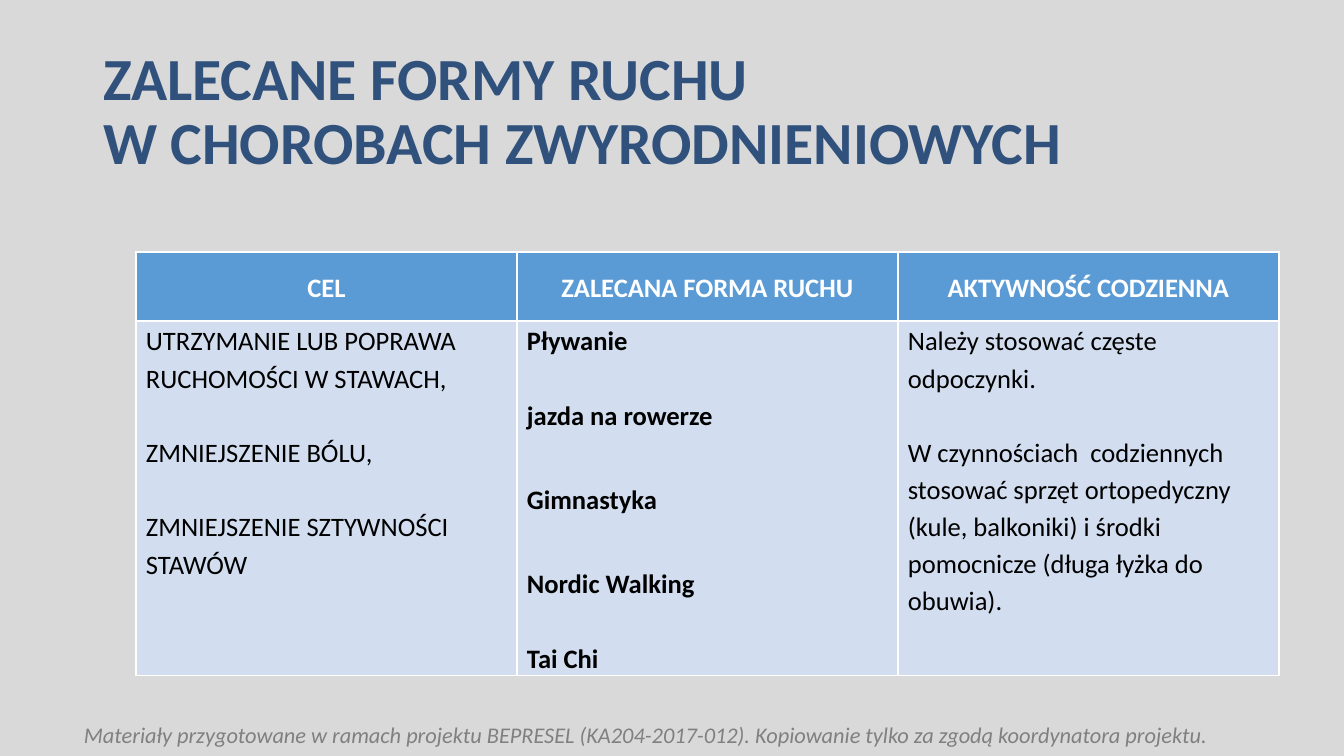
from dataclasses import dataclass

from lxml.etree import SubElement as Sub
from pptx import Presentation
from pptx.dml.color import RGBColor as Rgb
from pptx.enum.text import MSO_ANCHOR as Anchor, MSO_AUTO_SIZE as Fit, PP_ALIGN as Align
from pptx.oxml.ns import qn
from pptx.util import Pt

EMU = 914400 / 100.8


@dataclass(frozen=True)
class Theme:
    """Colours, font and type sizes of the slide."""
    font: str = "Calibri"
    back: str = "D9D9D9"
    title: str = "31517D"
    head: str = "5B9BD5"
    body: str = "D2DEEF"
    white: str = "FFFFFF"
    black: str = "000000"
    grey: str = "808080"
    big: float = 42.7
    cell: float = 19
    note: float = 16
    rule: float = 1
    gap: float = 26.7
    wide: float = 33.7


T = Theme()

HEADS = ["CEL", "ZALECANA FORMA RUCHU", "AKTYWNOŚĆ CODZIENNA"]
GOALS = [
    ("UTRZYMANIE LUB POPRAWA RUCHOMOŚCI W STAWACH,", 0),
    ("ZMNIEJSZENIE BÓLU,", T.gap),
    ("ZMNIEJSZENIE SZTYWNOŚCI STAWÓW", T.gap),
]
FORMS = [
    ("Pływanie", 0),
    ("jazda na rowerze", T.gap),
    ("Gimnastyka", T.wide),
    ("Nordic Walking", T.wide),
    ("Tai Chi", T.gap),
]
DAILY = [
    ("Należy stosować częste odpoczynki.", 0),
    ("W czynnościach  codziennych stosować sprzęt ortopedyczny (kule, balkoniki) "
     "i środki pomocnicze (długa łyżka do obuwia).", T.gap),
]
NOTE = ("Materiały przygotowane w ramach projektu BEPRESEL (KA204-2017-012). "
        "Kopiowanie tylko za zgodą koordynatora projektu.")


def px(num):
    """Turn pixels into EMU."""
    return round(num * EMU)


def apply(item, **vals):
    """Set every given attribute on an item."""
    for name, val in vals.items():
        setattr(item, name, val)


def paint(fill, tint):
    """Fill with one solid colour."""
    fill.solid()
    fill.fore_color.rgb = Rgb.from_string(tint)


def write(para, text, size, tint, form=None, **font):
    """Put formatted text into a paragraph."""
    para.text = text
    apply(para, **(form or {}))
    for run in para.runs:
        apply(run.font, name=T.font, size=Pt(size), **font)
        run.font.color.rgb = Rgb.from_string(tint)


def frame(cell):
    """Draw white borders on the four sides of a cell."""
    props = cell._tc.get_or_add_tcPr()
    for side in "LRTB":
        line = Sub(props, qn(f"a:ln{side}"), w=str(Pt(T.rule)))
        Sub(Sub(line, qn("a:solidFill")), qn("a:srgbClr"), val=T.white)


def fill_cell(cell, lines, back, tint, bold, align, anchor):
    """Style a cell and write its paragraphs."""
    frame(cell)
    paint(cell.fill, back)
    apply(cell, margin_left=px(10), margin_right=px(10), margin_top=0,
          margin_bottom=0, vertical_anchor=anchor)
    text = cell.text_frame
    for i, (words, gap) in enumerate(lines):
        para = text.add_paragraph() if i else text.paragraphs[0]
        form = dict(alignment=align, line_spacing=1.15, space_before=Pt(gap))
        write(para, words, T.cell, tint, form, bold=bold)


def add_title(slide):
    """Place and write the title."""
    title = slide.shapes.title
    apply(title, left=px(93), top=px(40), width=px(1159), height=px(146))
    apply(title.text_frame, word_wrap=True, auto_size=Fit.NONE,
          vertical_anchor=Anchor.MIDDLE)
    write(title.text_frame.paragraphs[0],
          "ZALECANE FORMY RUCHU \vW CHOROBACH ZWYRODNIENIOWYCH", T.big, T.title,
          dict(alignment=Align.LEFT, line_spacing=0.9), bold=True)


def add_grid(slide):
    """Build the table of goals, forms and daily habits."""
    grid = slide.shapes.add_table(2, 3, px(136), px(252), px(1143), px(423)).table
    for row, high in zip(grid.rows, (69, 354)):
        row.height = px(high)
    for i, (head, lines) in enumerate(zip(HEADS, (GOALS, FORMS, DAILY))):
        grid.columns[i].width = px(381)
        fill_cell(grid.cell(0, i), [(head, 0)], T.head, T.white, True,
                  Align.CENTER, Anchor.MIDDLE)
        fill_cell(grid.cell(1, i), lines, T.body, T.black, lines is FORMS,
                  Align.LEFT, Anchor.TOP)


def add_note(slide):
    """Write the notice at the foot."""
    text = slide.shapes.add_textbox(px(74), px(716), px(1260), px(37)).text_frame
    apply(text, word_wrap=True, auto_size=Fit.SHAPE_TO_FIT_TEXT)
    write(text.paragraphs[0], NOTE, T.note, T.grey, italic=True)


def main():
    """Build the slide and save it."""
    deck = Presentation()
    apply(deck, slide_width=px(1344), slide_height=px(756))
    slide = deck.slides.add_slide(deck.slide_layouts[5])
    paint(slide.background.fill, T.back)
    add_title(slide)
    add_grid(slide)
    add_note(slide)
    deck.save("out.pptx")


if __name__ == "__main__":
    main()
